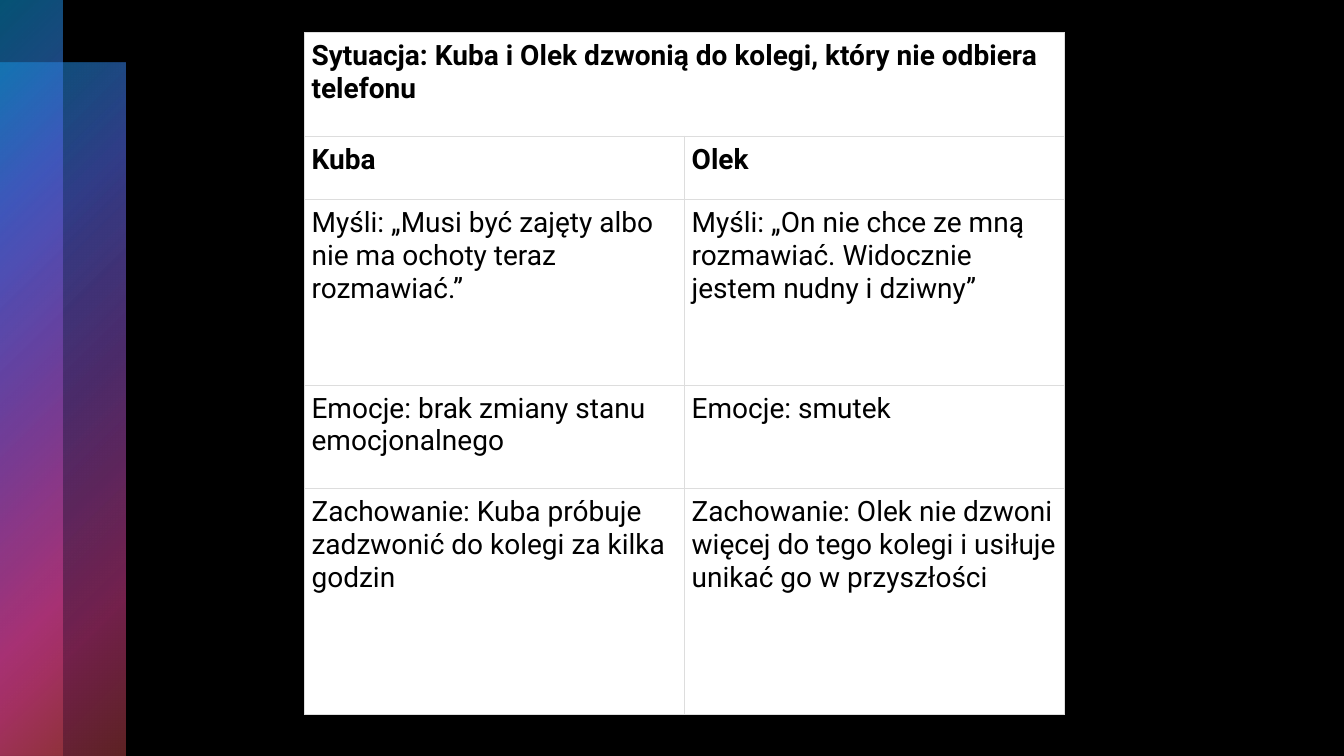
from lxml.etree import SubElement
from pptx import Presentation
from pptx.dml.color import RGBColor
from pptx.enum.shapes import MSO_SHAPE
from pptx.oxml import parse_xml
from pptx.oxml.ns import nsdecls, qn
from pptx.util import Inches, Pt

COLORS = {
    "background": "000000",
    "text": "000000",
    "cell": "FFFFFF",
    "border": "DDDDDD",
    "blue": "0BA5E8",
    "indigo": "5066E1",
    "violet": "894EC0",
    "pink": "E54196",
    "red": "BE4449",
}
# position, colour, opacity, all positions and opacities in percent
GLOW = [(0, "blue", 50), (25, "indigo", 60), (50, "violet", 55),
        (81, "pink", 50), (99, "red", 50)]

SITUATION = "Sytuacja: Kuba i Olek dzwonią do kolegi, który nie odbiera telefonu"
COMPARISON = [
    ("Kuba", "Olek"),
    ("Myśli: „Musi być zajęty albo nie ma ochoty teraz rozmawiać.”",
     "Myśli: „On nie chce ze mną rozmawiać. Widocznie jestem nudny i dziwny”"),
    ("Emocje: brak zmiany stanu emocjonalnego", "Emocje: smutek"),
    ("Zachowanie: Kuba próbuje zadzwonić do kolegi za kilka godzin",
     "Zachowanie: Olek nie dzwoni więcej do tego kolegi i usiłuje unikać go w przyszłości"),
]


class Deck:
    """Style and current slide; lengths are percent of the slide's width or height."""

    font_name, font_size = "Roboto", Pt(20)
    inset, border_width = Inches(0.07), Pt(0.6)

    def __init__(self):
        self.deck = Presentation()
        self.deck.slide_width, self.deck.slide_height = Inches(13.33), Inches(7.5)
        self.slide = self.deck.slides.add_slide(self.deck.slide_layouts[6])
        self.paint(self.slide.background.fill, "background")

    def x(self, share):
        return round(self.deck.slide_width * share / 100)

    def y(self, share):
        return round(self.deck.slide_height * share / 100)

    def paint(self, fill, color):
        fill.solid()
        fill.fore_color.rgb = RGBColor.from_string(COLORS[color])

    def glow_bar(self, top, width):
        """Bar on the left edge, down to the bottom, glowing from its top left corner."""
        bar = self.slide.shapes.add_shape(
            MSO_SHAPE.RECTANGLE, 0, self.y(top), self.x(width), self.y(100 - top))
        bar.shadow.inherit = False
        bar.line.fill.background()
        stops = "".join(
            f'<a:gs pos="{position * 1000}"><a:srgbClr val="{COLORS[color]}">'
            f'<a:alpha val="{opacity * 1000}"/></a:srgbClr></a:gs>'
            for position, color, opacity in GLOW)
        gradient = parse_xml(
            f'<a:gradFill {nsdecls("a")} rotWithShape="1"><a:gsLst>{stops}</a:gsLst>'
            '<a:path path="circle"><a:fillToRect r="100000" b="100000"/></a:path>'
            '</a:gradFill>')
        bar.element.spPr.find(qn("a:prstGeom")).addnext(gradient)

    def table(self, left, top, column_width, row_heights):
        frame = self.slide.shapes.add_table(
            len(row_heights), 2, self.x(left), self.y(top),
            self.x(2 * column_width), self.y(sum(row_heights)))
        grid = frame.table
        grid.first_row = grid.horz_banding = False
        for column in grid.columns:
            column.width = self.x(column_width)
        for row, height in zip(grid.rows, row_heights):
            row.height = self.y(height)
        for cell in grid.iter_cells():
            self.style_cell(cell)
        return grid

    def style_cell(self, cell):
        cell.margin_left = cell.margin_right = self.inset
        cell.margin_top = cell.margin_bottom = self.inset
        self.paint(cell.fill, "cell")
        properties = cell._tc.get_or_add_tcPr()
        for order, side in enumerate(("lnL", "lnR", "lnT", "lnB")):
            border = parse_xml(f'<a:{side} {nsdecls("a")} w="{self.border_width}"/>')
            line_fill = SubElement(border, qn("a:solidFill"))
            SubElement(line_fill, qn("a:srgbClr"), val=COLORS["border"])
            properties.insert(order, border)

    def cell_text(self, cell, text, bold):
        run = cell.text_frame.paragraphs[0].add_run()
        run.text = text
        run.font.name, run.font.size, run.font.bold = self.font_name, self.font_size, bold
        run.font.color.rgb = RGBColor.from_string(COLORS["text"])

    def save(self):
        self.deck.save("out.pptx")


def main():
    deck = Deck()
    deck.glow_bar(top=8.27, width=9.3)
    deck.glow_bar(top=0, width=4.65)

    reactions = deck.table(left=22.66, top=4.27, column_width=28.28,
                           row_heights=[13.73, 8.4, 24.53, 13.73, 29.87])
    reactions.cell(0, 0).merge(reactions.cell(0, 1))
    deck.cell_text(reactions.cell(0, 0), SITUATION, bold=True)
    for row, pair in enumerate(COMPARISON, start=1):
        for column, reaction in enumerate(pair):
            deck.cell_text(reactions.cell(row, column), reaction, bold=row == 1)
    deck.save()


if __name__ == "__main__":
    main()
